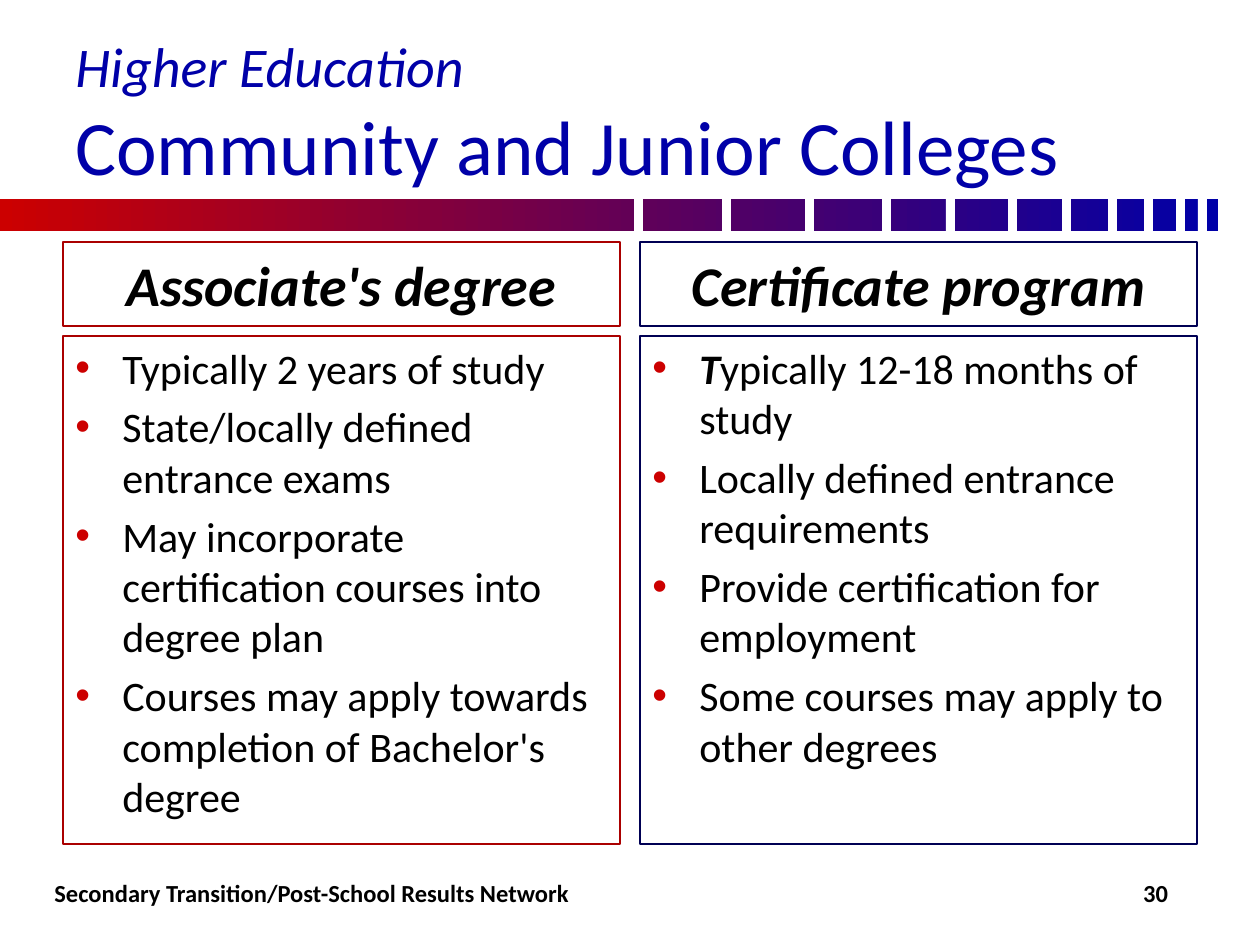
"""Build the community and junior colleges slide."""
from dataclasses import dataclass

from lxml.etree import SubElement
from pptx import Presentation
from pptx.dml.color import RGBColor
from pptx.enum.shapes import MSO_SHAPE
from pptx.enum.text import MSO_ANCHOR, PP_ALIGN
from pptx.oxml.ns import qn
from pptx.util import Emu, Pt

EMU_PER_PX = 914400 / 126
FONT = "Calibri"
COLORS = {
    "red": "CC0000",
    "blue": "0000A8",
    "dark_red": "AA0000",
    "navy": "000054",
    "black": "000000",
    "white": "FFFFFF",
}
BAR_TOP, BAR_WIDTH, BAR_HEIGHT = 199, 1218, 32
GAP_WIDTH = 9
GAP_LEFTS = (634, 722, 805, 882, 946, 1008, 1062, 1108, 1144, 1176, 1198)
PANEL_WIDTH = 557
INDENT = 47


@dataclass(frozen=True)
class Panel:
    left: int
    outline: str
    heading: str
    points: tuple[str, ...]
    emphasis: str = ""


@dataclass(frozen=True)
class Footer:
    left: int
    width: int
    text: str
    align: PP_ALIGN


PANELS = (
    Panel(63, "dark_red", "Associate's degree", (
        "Typically 2 years of study",
        "State/locally defined entrance exams",
        "May incorporate certification courses into degree plan",
        "Courses may apply towards completion of Bachelor's degree",
    )),
    Panel(640, "navy", "Certificate program", (
        "Typically 12-18 months of study",
        "Locally defined entrance requirements",
        "Provide certification for employment",
        "Some courses may apply to other degrees",
    ), emphasis="T"),
)
FOOTERS = (
    Footer(42, 577, "Secondary Transition/Post-School Results Network", PP_ALIGN.LEFT),
    Footer(1103, 105, "30", PP_ALIGN.CENTER),
)


def px(length: int) -> Emu:
    return Emu(round(length * EMU_PER_PX))


def color(name: str) -> RGBColor:
    return RGBColor.from_string(COLORS[name])


def add_rectangle(page, left: int, top: int, width: int, height: int):
    box = page.shapes.add_shape(
        MSO_SHAPE.RECTANGLE, px(left), px(top), px(width), px(height))
    box.shadow.inherit = False
    box.line.fill.background()
    return box


def add_text_box(page, left: int, top: int, width: int, height: int):
    box = page.shapes.add_textbox(px(left), px(top), px(width), px(height))
    box.text_frame.word_wrap = True
    box.text_frame.vertical_anchor = MSO_ANCHOR.MIDDLE
    return box


def style(para, size: int | None, fill: str = "black", bold: bool = False,
          italic: bool = False, align: PP_ALIGN = PP_ALIGN.LEFT) -> None:
    para.alignment = align
    font = para.font
    font.name, font.bold, font.italic = FONT, bold, italic
    font.color.rgb = color(fill)
    if size:
        font.size = Pt(size)


def add_bullet(para) -> None:
    properties = para._p.get_or_add_pPr()
    properties.set("marL", str(px(INDENT)))
    properties.set("indent", str(px(-INDENT)))
    defaults = properties.find(qn("a:defRPr"))
    properties.remove(defaults)
    bullet_color = SubElement(properties, qn("a:buClr"))
    SubElement(bullet_color, qn("a:srgbClr"), val=COLORS["red"])
    SubElement(properties, qn("a:buFont"), typeface="Arial")
    SubElement(properties, qn("a:buChar"), char="•")
    properties.append(defaults)


def add_bar(page) -> None:
    bar = add_rectangle(page, 0, BAR_TOP, BAR_WIDTH, BAR_HEIGHT)
    bar.fill.gradient()
    bar.fill.gradient_angle = 0
    for stop, name in zip(bar.fill.gradient_stops, ("red", "blue")):
        stop.color.rgb = color(name)
    for left in GAP_LEFTS:
        gap = add_rectangle(page, left, BAR_TOP, GAP_WIDTH, BAR_HEIGHT)
        gap.fill.solid()
        gap.fill.fore_color.rgb = color("white")


def add_title(page) -> None:
    para = add_text_box(page, 63, 32, 1134, 158).text_frame.paragraphs[0]
    style(para, None, "blue")
    kicker = para.add_run()
    kicker.text = "Higher Education"
    kicker.font.size, kicker.font.italic = Pt(32), True
    para.add_line_break()
    heading = para.add_run()
    heading.text = "Community and Junior Colleges"
    heading.font.size = Pt(44)


def add_outlined(page, panel: Panel, top: int, height: int, anchor: MSO_ANCHOR):
    box = add_rectangle(page, panel.left, top, PANEL_WIDTH, height)
    box.fill.background()
    box.line.color.rgb = color(panel.outline)
    box.line.width = Pt(0.75)
    box.text_frame.word_wrap = True
    box.text_frame.vertical_anchor = anchor
    return box.text_frame


def add_panel(page, panel: Panel) -> None:
    para = add_outlined(page, panel, 242, 84, MSO_ANCHOR.MIDDLE).paragraphs[0]
    para.text = panel.heading
    para.space_before = Pt(6.4)
    style(para, 32, bold=True, italic=True, align=PP_ALIGN.CENTER)

    frame = add_outlined(page, panel, 336, 508, MSO_ANCHOR.TOP)
    for index, point in enumerate(panel.points):
        para = frame.paragraphs[0] if index == 0 else frame.add_paragraph()
        para.space_before = Pt(4.8)
        style(para, 24)
        add_bullet(para)
        if index == 0 and panel.emphasis:
            span = para.add_run()
            span.text = panel.emphasis
            span.font.bold = span.font.italic = True
            point = point.removeprefix(panel.emphasis)
        para.add_run().text = point


def add_footer(page, footer: Footer) -> None:
    box = add_text_box(page, footer.left, 861, footer.width, 63)
    para = box.text_frame.paragraphs[0]
    para.text = footer.text
    style(para, 14, bold=True, align=footer.align)


def main() -> None:
    deck = Presentation()
    deck.slide_width, deck.slide_height = px(1260), px(945)
    page = deck.slides.add_slide(deck.slide_layouts[6])
    add_bar(page)
    add_title(page)
    for panel in PANELS:
        add_panel(page, panel)
    for footer in FOOTERS:
        add_footer(page, footer)
    deck.save("out.pptx")


if __name__ == "__main__":
    main()
